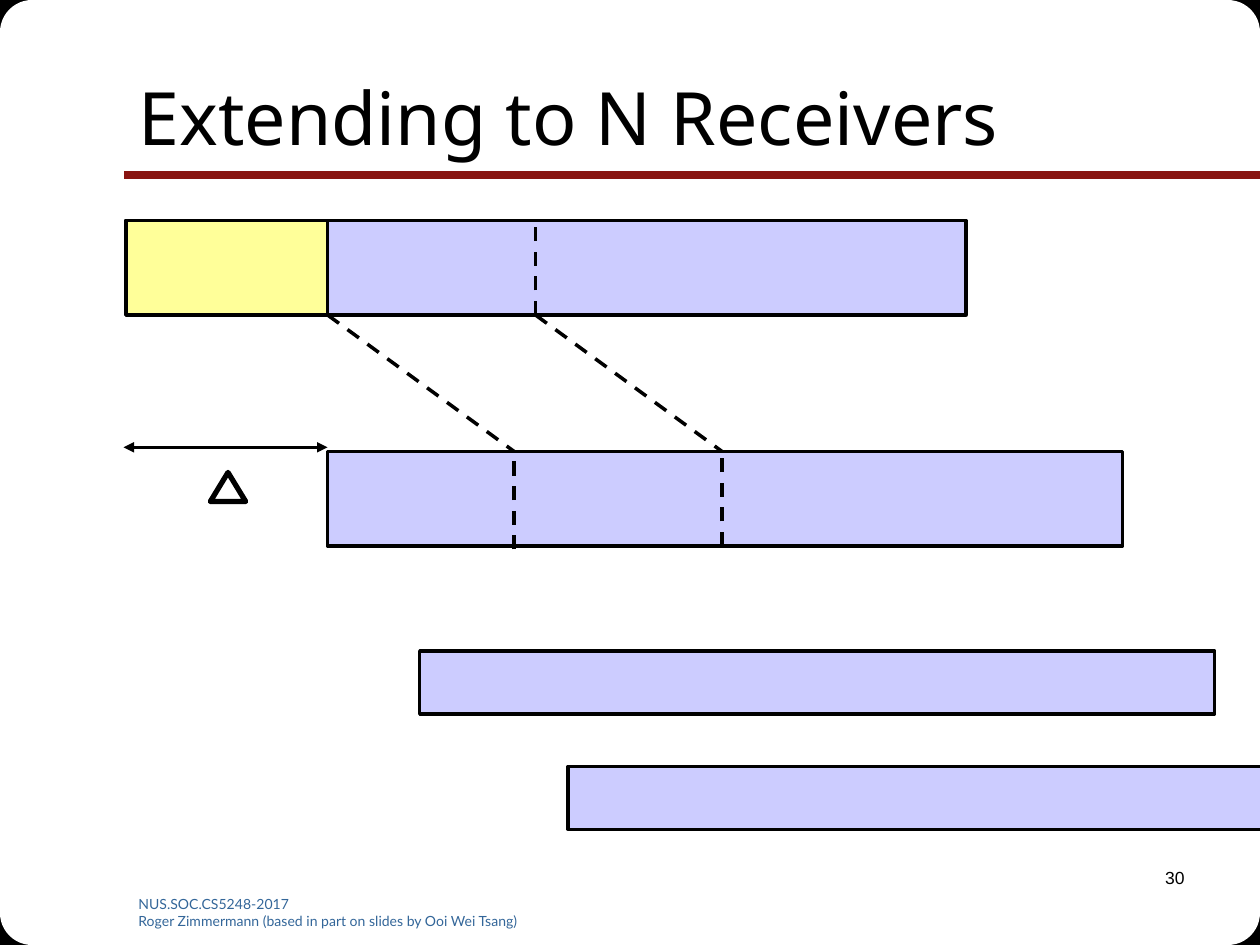
from dataclasses import dataclass
from itertools import product
from typing import Optional

from lxml.etree import SubElement
from pptx import Presentation
from pptx.dml.color import RGBColor
from pptx.enum.dml import MSO_LINE_DASH_STYLE as Dash
from pptx.enum.shapes import MSO_CONNECTOR_TYPE as ConnectorType
from pptx.enum.shapes import MSO_SHAPE as ShapeType
from pptx.enum.text import MSO_ANCHOR as Anchor
from pptx.enum.text import MSO_AUTO_SIZE as AutoSize
from pptx.enum.text import PP_ALIGN as Align
from pptx.oxml.ns import qn
from pptx.util import Pt

BLACK = RGBColor(0, 0, 0)
WHITE = RGBColor(255, 255, 255)
DARK_RED = RGBColor(0x89, 0x14, 0x11)
STEEL_BLUE = RGBColor(0x33, 0x66, 0x99)
LAVENDER = RGBColor(0xCC, 0xCC, 0xFF)
YELLOW = RGBColor(0xFF, 0xFF, 0x99)

WIDTH, HEIGHT = 720, 540
CORNER, ROUND = 31, 110
LEFT, START = 72, 187.2
SENDER_TOP, RECEIVER_TOP, BAR_HEIGHT = 126, 258, 54
SENDER_BOTTOM = SENDER_TOP + BAR_HEIGHT
RECEIVER_WIDTH = 454.3
SPLIT, DELAY = 306, 106.6


@dataclass
class Box:
    left: float
    top: float
    width: float
    height: float
    fill: Optional[RGBColor] = None
    line: Optional[RGBColor] = BLACK
    weight: float = 2
    kind: ShapeType = ShapeType.RECTANGLE


@dataclass
class Line:
    x1: float
    y1: float
    x2: float
    y2: float
    color: RGBColor = BLACK
    weight: float = 2
    dash: Optional[Dash] = Dash.DASH
    arrows: bool = False


@dataclass
class Label:
    left: float
    top: float
    width: float
    height: float
    lines: list[str]
    font: dict
    align: Align = Align.LEFT


def set_values(target, values: dict) -> None:
    for name, value in values.items():
        setattr(target, name, value)


def format_font(font, values: dict, color: RGBColor) -> None:
    set_values(font, values)
    font.color.rgb = color


def draw_box(slide, box: Box) -> None:
    shape = slide.shapes.add_shape(
        box.kind, Pt(box.left), Pt(box.top), Pt(box.width), Pt(box.height))
    shape.shadow.inherit = False
    if box.fill is None:
        shape.fill.background()
    else:
        shape.fill.solid()
        shape.fill.fore_color.rgb = box.fill
    if box.line is None:
        shape.line.fill.background()
    else:
        shape.line.color.rgb = box.line
        shape.line.width = Pt(box.weight)


def draw_line(slide, line: Line) -> None:
    connector = slide.shapes.add_connector(
        ConnectorType.STRAIGHT, Pt(line.x1), Pt(line.y1), Pt(line.x2), Pt(line.y2))
    connector.line.color.rgb = line.color
    set_values(connector.line, {"width": Pt(line.weight), "dash_style": line.dash})
    if line.arrows:
        outline = connector.line._get_or_add_ln()
        for end in ("a:headEnd", "a:tailEnd"):
            SubElement(outline, qn(end), type="triangle")
    SubElement(connector._element.spPr, qn("a:effectLst"))


def draw_label(slide, label: Label, color: RGBColor) -> None:
    box = slide.shapes.add_textbox(
        Pt(label.left), Pt(label.top), Pt(label.width), Pt(label.height))
    frame = box.text_frame
    frame.word_wrap = True
    frame.text = "\n".join(label.lines)
    for paragraph in frame.paragraphs:
        paragraph.alignment = label.align
        format_font(paragraph.runs[0].font, label.font, color)


def draw_title(slide, text: str) -> None:
    title = slide.shapes.title
    set_values(title, {"left": Pt(LEFT), "top": Pt(21.6),
                       "width": Pt(612), "height": Pt(90)})
    frame = title.text_frame
    frame.text = text
    set_values(frame, {"auto_size": AutoSize.NONE, "word_wrap": True,
                       "vertical_anchor": Anchor.MIDDLE})
    paragraph = frame.paragraphs[0]
    paragraph.alignment = Align.LEFT
    format_font(paragraph.runs[0].font, {"size": Pt(42), "name": "Noto Sans"}, BLACK)


def draw_frame(slide) -> None:
    sides = list(product((0, 1), repeat=2))
    for size, fill, line, kind in (
            (CORNER, BLACK, BLACK, ShapeType.RECTANGLE),
            (ROUND, WHITE, None, ShapeType.ROUNDED_RECTANGLE)):
        for right, bottom in sides:
            draw_box(slide, Box(right * (WIDTH - size), bottom * (HEIGHT - size),
                                size, size, fill, line, 0.75, kind))
    draw_line(slide, Line(WIDTH, 100, 70.6, 100, DARK_RED, 4.5, None))
    draw_label(slide, Label(
        LEFT, 508.3, 264, 20,
        ["NUS.SOC.CS5248-2017",
         "Roger Zimmermann (based in part on slides by Ooi Wei Tsang)"],
        {"size": Pt(8), "name": "Lato"}), STEEL_BLUE)
    draw_label(slide, Label(534, 492, 150, 36, ["30"],
                            {"size": Pt(10), "name": "Arial"}, Align.RIGHT), BLACK)


def draw_timeline(slide) -> None:
    for box in (
            Box(LEFT, SENDER_TOP, 480, BAR_HEIGHT, LAVENDER),
            Box(START, RECEIVER_TOP, RECEIVER_WIDTH, BAR_HEIGHT, LAVENDER),
            Box(120.2, 270, 20.2, 16.6, weight=3, kind=ShapeType.ISOSCELES_TRIANGLE),
            Box(LEFT, SENDER_TOP, START - LEFT, BAR_HEIGHT, YELLOW),
            Box(239.8, 372, RECEIVER_WIDTH, 36, LAVENDER),
            Box(324.7, 438, RECEIVER_WIDTH, 36, LAVENDER)):
        draw_box(slide, box)
    draw_line(slide, Line(70.6, 255.6, START, 255.6, dash=None, arrows=True))
    for x in (START, SPLIT):
        draw_line(slide, Line(x, SENDER_BOTTOM, x + DELAY, RECEIVER_TOP))
    for x, top in ((SPLIT, SENDER_TOP), (SPLIT + DELAY, RECEIVER_TOP),
                   (START + DELAY, RECEIVER_TOP + 2)):
        draw_line(slide, Line(x, top + BAR_HEIGHT, x, top))


def main() -> None:
    presentation = Presentation()
    set_values(presentation, {"slide_width": Pt(WIDTH), "slide_height": Pt(HEIGHT)})
    slide = presentation.slides.add_slide(presentation.slide_layouts[5])
    draw_frame(slide)
    title = slide.shapes.title
    slide.shapes._spTree.append(title._element)
    draw_title(slide, "Extending to N Receivers")
    draw_timeline(slide)
    presentation.save("out.pptx")


if __name__ == "__main__":
    main()
